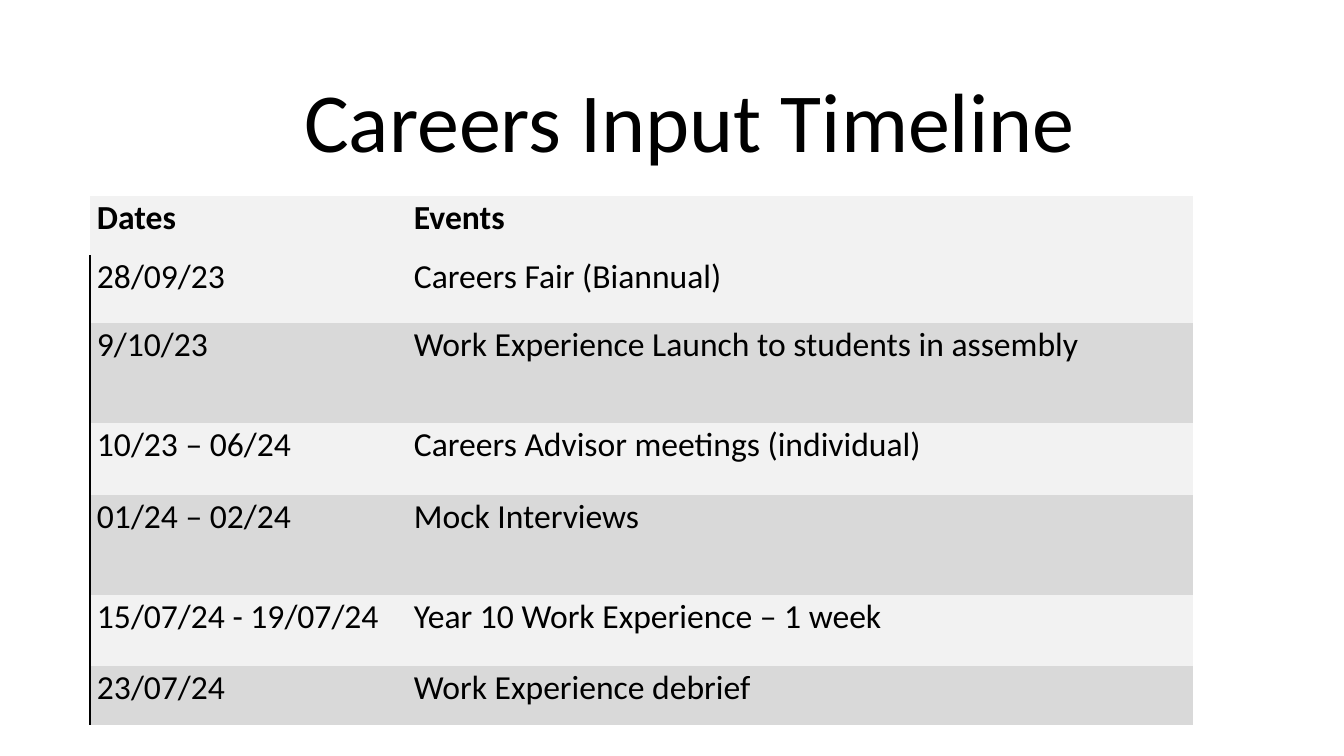
from lxml import etree
from pptx import Presentation
from pptx import util as u
from pptx.dml.color import RGBColor
from pptx.enum import text
from pptx.oxml.ns import qn

PX = 9144000 / 1008
COLORS = {"ink": "000000", "light": "F2F2F2", "dark": "D9D9D9"}
PLAIN_STYLE = "{2D5ABB26-0587-4C30-8999-92F81FD0307C}"


def px(length):
    return u.Emu(round(length * PX))


def write(frame, words, size, bold=False, anchor=text.MSO_ANCHOR.TOP,
          align=text.PP_ALIGN.LEFT, spacing=1.0, margins=(10, 5, 10, 5)):
    """Fill a text frame or table cell; margins run left, top, right, bottom."""
    frame.vertical_anchor = anchor
    (frame.margin_left, frame.margin_top,
     frame.margin_right, frame.margin_bottom) = map(px, margins)
    para = getattr(frame, "text_frame", frame).paragraphs[0]
    para.alignment = align
    para.line_spacing = spacing
    span = para.add_run()
    span.text = words
    span.font.name = "Calibri"
    span.font.size = u.Pt(size)
    span.font.bold = bold
    span.font.color.rgb = RGBColor.from_string(COLORS["ink"])


deck = Presentation()
deck.slide_width, deck.slide_height = px(1344), px(756)
page = deck.slides.add_slide(deck.slide_layouts[0])
subtitle = page.placeholders[1].element
subtitle.getparent().remove(subtitle)

title = page.shapes.title
title.left, title.top, title.width, title.height = map(px, (167, 30, 1045, 146))
title.text_frame.auto_size = text.MSO_AUTO_SIZE.NONE
write(title.text_frame, "Careers Input Timeline", 60, anchor=text.MSO_ANCHOR.BOTTOM,
      align=text.PP_ALIGN.CENTER, spacing=0.9)

timeline = [
    (59, "Dates", "Events"),
    (68, "28/09/23", "Careers Fair (Biannual)"),
    (100, "9/10/23", "Work Experience Launch to students in assembly"),
    (72, "10/23 – 06/24", "Careers Advisor meetings (individual)"),
    (100, "01/24 – 02/24", "Mock Interviews"),
    (71, "15/07/24 - 19/07/24", "Year 10 Work Experience – 1 week"),
    (59, "23/07/24", "Work Experience debrief"),
]
widths = (317, 786)
total_height = sum(height for height, *_ in timeline)
holder = page.shapes.add_table(len(timeline), len(widths), px(90), px(196),
                               px(sum(widths)), px(total_height))
table = holder.table
next(holder.element.iter(qn("a:tableStyleId"))).text = PLAIN_STYLE
for column, width in zip(table.columns, widths):
    column.width = px(width)

for row, (height, *entries) in enumerate(timeline):
    table.rows[row].height = px(height)
    header = row == 0
    shade = "light" if header or row % 2 else "dark"
    for column, words in enumerate(entries):
        cell = table.cell(row, column)
        write(cell, words, 24, bold=header, margins=(7, 2, 10, 16),
              anchor=text.MSO_ANCHOR.BOTTOM if header else text.MSO_ANCHOR.TOP)
        cell.fill.solid()
        cell.fill.fore_color.rgb = RGBColor.from_string(COLORS[shade])
        if column == 0 and not header:
            border = etree.Element(qn("a:lnL"), w=str(u.Pt(1)))
            fill = etree.SubElement(border, qn("a:solidFill"))
            etree.SubElement(fill, qn("a:srgbClr"), val=COLORS["ink"])
            cell._tc.tcPr.insert(0, border)

deck.save("out.pptx")
